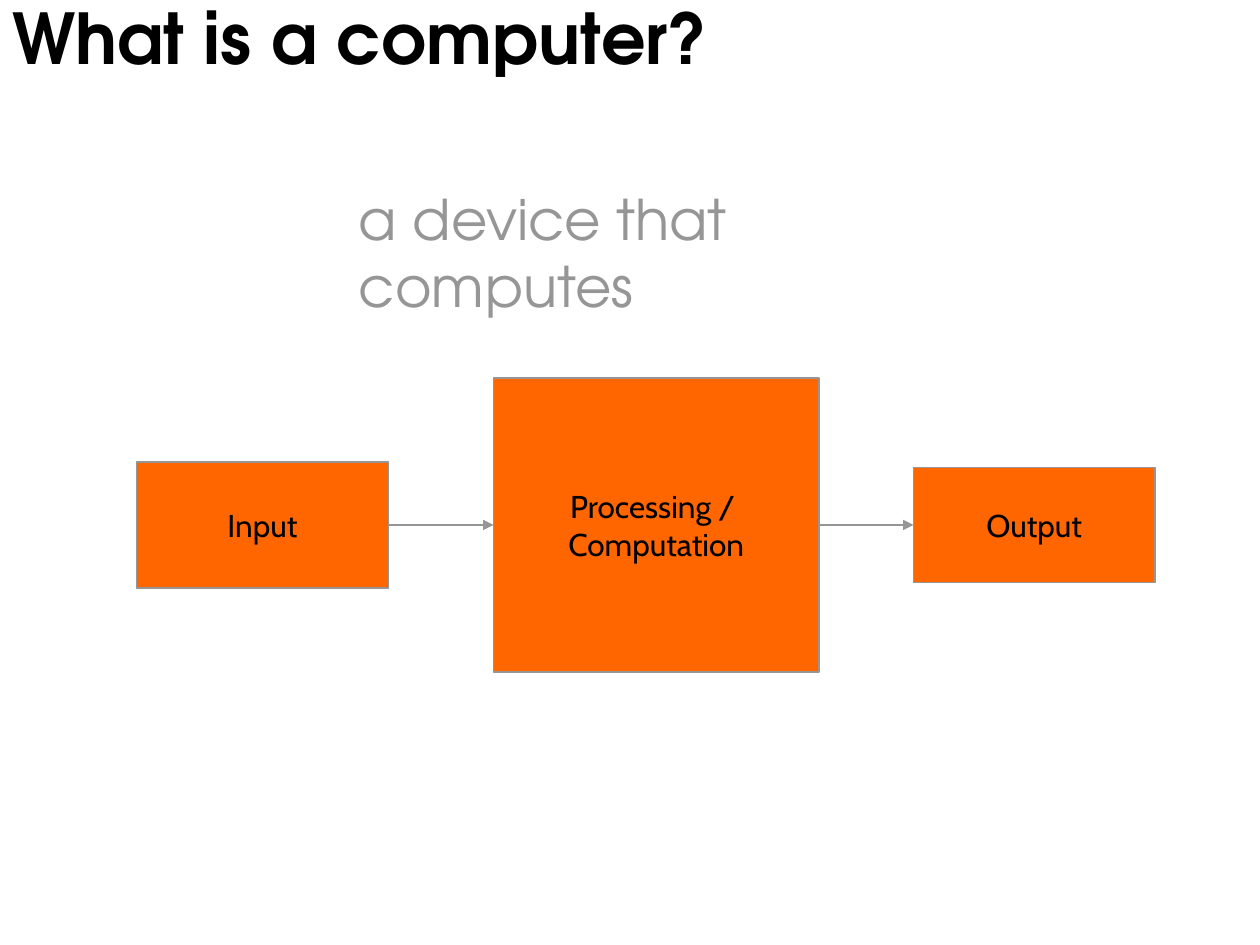
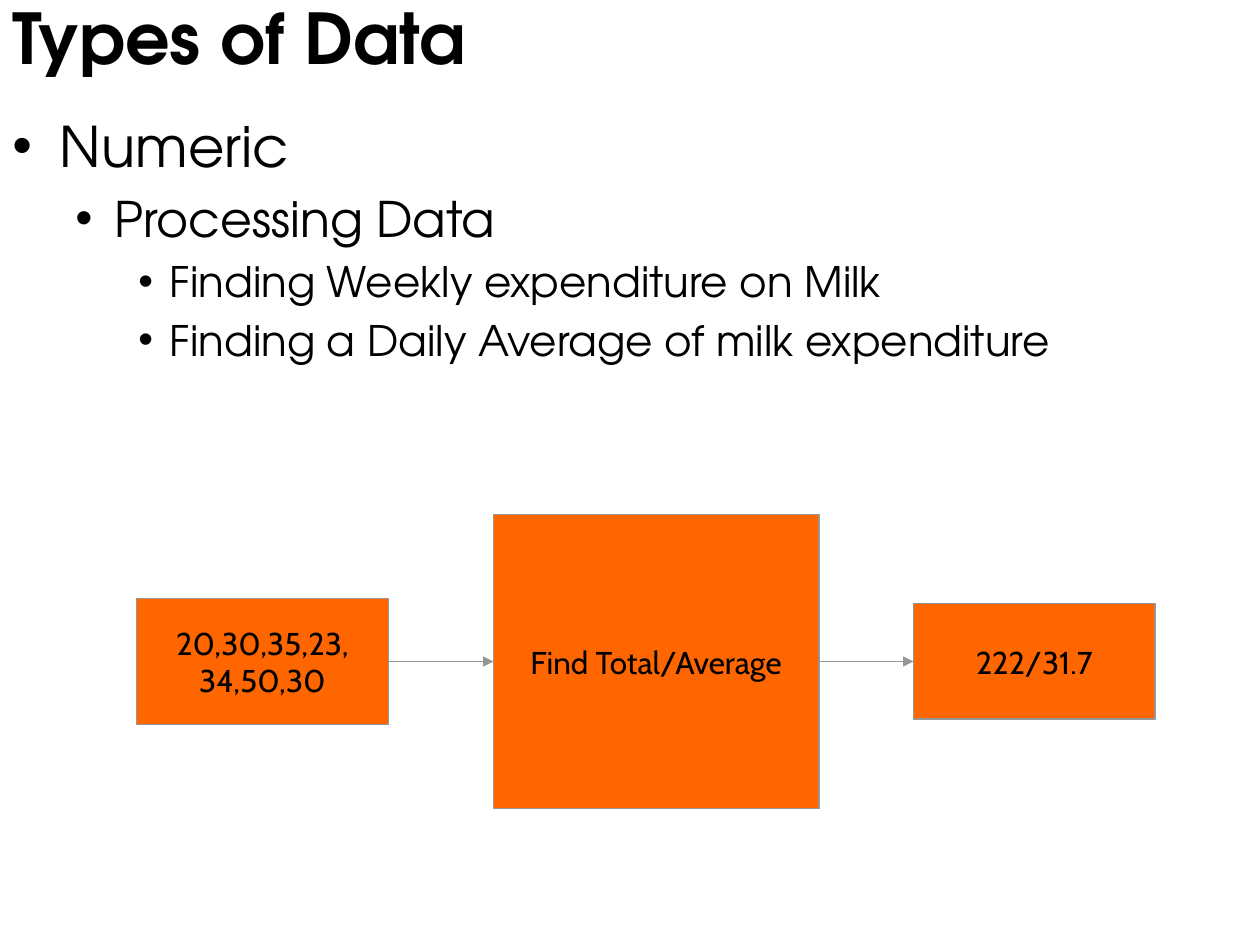
import dataclasses
import typing

import pptx
import pptx.dml.color
import pptx.enum.shapes
import pptx.enum.text
import pptx.oxml
import pptx.oxml.ns
import pptx.util

# Shared look
INK = {"text": "000000", "fill": "FF6600", "line": "969696", "paper": "FFFFFF"}
HEAD, LABEL = "TeX Gyre Adventor", "Cabin"
ALIGN = pptx.enum.text.PP_ALIGN
ANCHOR = pptx.enum.text.MSO_ANCHOR

# Grid of square cells
WIDE, TALL = pptx.util.Inches(10), pptx.util.Inches(7.5)
COLS, ROWS = 120, 90


@dataclasses.dataclass(frozen=True)
class Slot:
    col: float
    row: float
    cols: float
    rows: float

    def place(self) -> tuple[int, int, int, int]:
        x, y = WIDE / COLS, TALL / ROWS
        return (round(self.col * x), round(self.row * y),
                round(self.cols * x), round(self.rows * y))


@dataclasses.dataclass(frozen=True)
class Stage:
    col: int
    cols: int
    rows: int


TITLE = Slot(0, -1, COLS, 9)
BODY = Slot(0, 10, COLS, 74)
QUOTE = Slot(33, 17, 53.4, 7.7)
STAGES = (Stage(13, 24, 12), Stage(47, 31, 28), Stage(87, 23, 11))


def tint(name: str) -> pptx.dml.color.RGBColor:
    return pptx.dml.color.RGBColor.from_string(INK[name])


def add(parent: typing.Any, tag: str, **attrs: str) -> None:
    node = pptx.oxml.parse_xml(f"<{tag} {pptx.oxml.ns.nsdecls('a')}/>")
    for key, value in attrs.items():
        node.set(key, value)
    parent.append(node)


def write(shape: typing.Any, lines: typing.Sequence[str], *, size: float = 18,
          face: str = HEAD, ink: str = "text", bold: bool = False,
          align: typing.Any = ALIGN.LEFT, anchor: typing.Any = ANCHOR.TOP,
          wrap: bool = True, levels: typing.Sequence[int] = ()) -> None:
    """Fill a shape with text; levels turn the lines into a bullet list."""
    frame = shape.text_frame
    frame.word_wrap, frame.vertical_anchor = wrap, anchor
    for i, line in enumerate(lines):
        para = frame.paragraphs[0] if i == 0 else frame.add_paragraph()
        para.text, para.alignment = line, align
        points = size
        if levels:
            points = size - 4 * levels[i]
            if i:
                para.space_before = pptx.util.Pt(points * 0.2)
            bullet(para, levels[i])
        for run in para.runs:
            font = run.font
            font.name, font.size, font.bold = face, pptx.util.Pt(points), bold
            font.color.rgb = tint(ink)


def bullet(para: typing.Any, level: int) -> None:
    """Indent steps in by 7/16 inch while the hang shrinks by 1/16."""
    para.level = level
    props = para._p.get_or_add_pPr()
    props.set("marL", str(pptx.util.Inches((6 + 7 * level) / 16)))
    props.set("indent", str(-pptx.util.Inches((6 - level) / 16)))
    add(props, "a:buFont", typeface="Arial")
    add(props, "a:buChar", char="•")


def text(slide: typing.Any, slot: Slot, *lines: str, **form: typing.Any) -> None:
    write(slide.shapes.add_textbox(*slot.place()), lines, **form)


def block(slide: typing.Any, slot: Slot, lines: typing.Sequence[str]) -> typing.Any:
    shape = slide.shapes.add_shape(
        pptx.enum.shapes.MSO_SHAPE.RECTANGLE, *slot.place())
    shape.shadow.inherit = False
    shape.fill.solid()
    shape.fill.fore_color.rgb = tint("fill")
    shape.line.color.rgb = tint("line")
    shape.line.width = pptx.util.Pt(0.75)
    write(shape, lines, face=LABEL, align=ALIGN.CENTER,
          anchor=ANCHOR.MIDDLE, wrap=False)
    return shape


def arrow(slide: typing.Any, start: typing.Any, end: typing.Any) -> None:
    line = slide.shapes.add_connector(
        pptx.enum.shapes.MSO_CONNECTOR.STRAIGHT, 0, 0, 0, 0)
    line.begin_connect(start, 3)
    line.end_connect(end, 1)
    line.line.color.rgb = tint("line")
    line.line.width = pptx.util.Pt(0.75)
    add(line.line._get_or_add_ln(), "a:tailEnd", type="triangle")
    add(line._element.spPr, "a:effectLst")


def flow(slide: typing.Any, mid: float, *labels: typing.Sequence[str]) -> None:
    """Draw the three stages centred on one row and join them."""
    blocks = [
        block(slide, Slot(s.col, mid - s.rows / 2, s.cols, s.rows), lines)
        for s, lines in zip(STAGES, labels)
    ]
    for start, end in zip(blocks, blocks[1:]):
        arrow(slide, start, end)


def page(deck: typing.Any, title: str) -> typing.Any:
    slide = deck.slides.add_slide(deck.slide_layouts[6])
    slide.background.fill.solid()
    slide.background.fill.fore_color.rgb = tint("paper")
    text(slide, TITLE, title, size=40, bold=True, anchor=ANCHOR.MIDDLE)
    return slide


def main() -> None:
    deck = pptx.Presentation()
    deck.slide_width, deck.slide_height = WIDE, TALL

    # What a computer does
    slide = page(deck, "What is a computer?")
    flow(slide, 50, ["Input"], ["Processing / \vComputation"], ["Output"])
    text(slide, QUOTE, "a device that computes", size=32, ink="line")

    # Numeric data example
    slide = page(deck, "Types of Data")
    text(slide, BODY, "Numeric", "Processing Data",
         "Finding Weekly expenditure on Milk",
         "Finding a Daily Average of milk expenditure",
         size=32, levels=(0, 1, 2, 2))
    flow(slide, 63, ["20,30,35,23,", "34,50,30"],
         ["Find Total/Average"], ["222/31.7"])

    deck.save("out.pptx")


if __name__ == "__main__":
    main()
